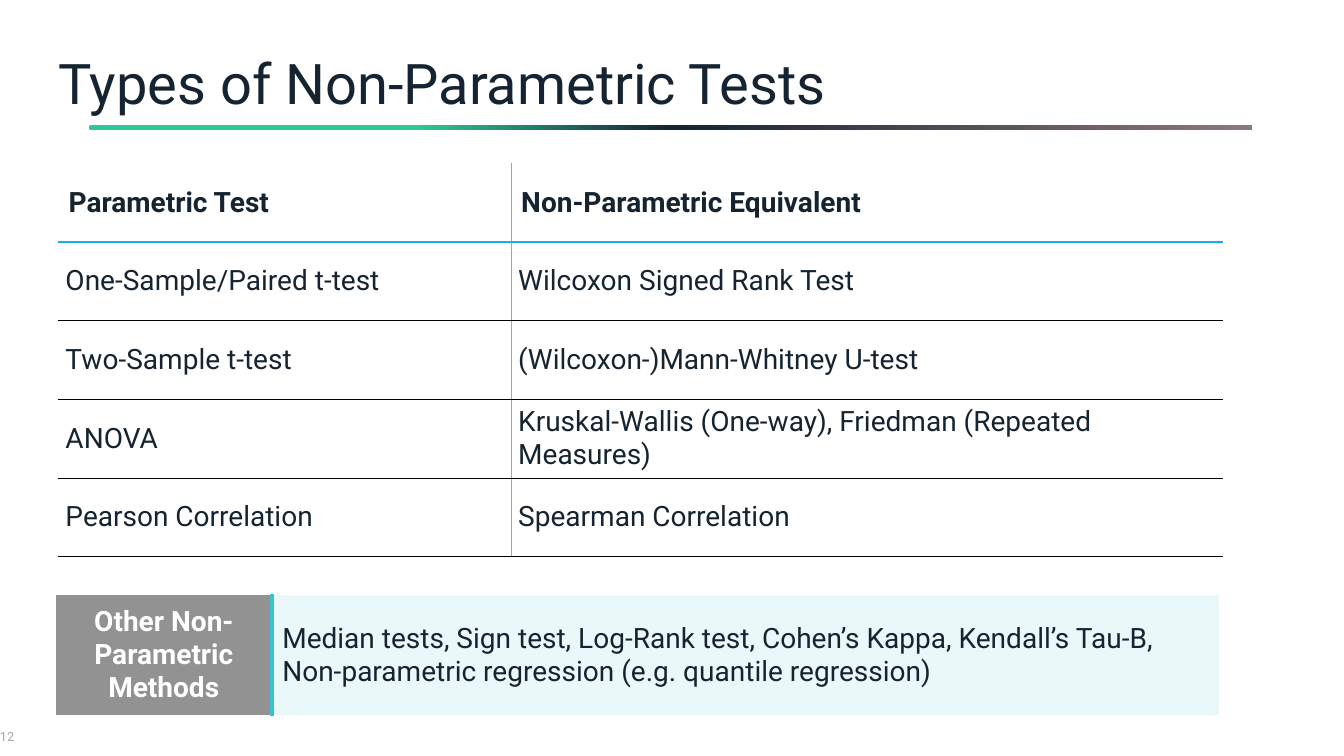
from dataclasses import dataclass

from lxml import etree
from pptx import Presentation
from pptx.dml.color import RGBColor
from pptx.enum.shapes import MSO_SHAPE
from pptx.enum.text import MSO_ANCHOR, PP_ALIGN
from pptx.oxml import parse_xml
from pptx.oxml.ns import nsdecls, qn
from pptx.util import Inches, Pt

ROUND_RECT = MSO_SHAPE.ROUNDED_RECTANGLE
MIDDLE, BOTTOM = MSO_ANCHOR.MIDDLE, MSO_ANCHOR.BOTTOM
LEFT, CENTER = PP_ALIGN.LEFT, PP_ALIGN.CENTER

FONT = "Roboto"
TITLE_ONLY = 5
COLORS = {
    "ink": "152430",
    "white": "FFFFFF",
    "black": "000000",
    "grey": "A5A5A5",
    "dark": "262626",
    "green": "2EC99B",
    "mauve": "907680",
    "blue": "1CADE4",
    "teal": "37C2D6",
    "pale": "D7F3F7",
}
TESTS = [
    ("Parametric Test", "Non-Parametric Equivalent"),
    ("One-Sample/Paired t-test", "Wilcoxon Signed Rank Test"),
    ("Two-Sample t-test", "(Wilcoxon-)Mann-Whitney U-test"),
    ("ANOVA", "Kruskal-Wallis (One-way), Friedman (Repeated Measures)"),
    ("Pearson Correlation", "Spearman Correlation"),
]
OTHER_LABEL = "Other Non-Parametric Methods"
OTHER_METHODS = (
    "Median tests, Sign test, Log-Rank test, Cohen’s Kappa, Kendall’s Tau-B, "
    "Non-parametric regression (e.g. quantile regression)"
)


@dataclass
class Border:
    color: str
    width: float


EDGE = Border("white", 1)
HEADER_RULE = Border("blue", 1.5)
ROW_RULE = Border("black", 0.25)
DIVIDER = Border("grey", 0.5)
ACCENT = Border("teal", 3)


@dataclass
class CellStyle:
    """Margins are horizontal and vertical inches; borders run left, right, top, bottom."""
    borders: tuple[Border, Border, Border, Border]
    fill: str = "white"
    opacity: int = 100
    color: str = "ink"
    bold: bool = False
    align: PP_ALIGN = LEFT
    margins: tuple[float, float] = (0.1, 0.05)


def add_run(p, text: str, size: float, color: str, bold: bool = False) -> None:
    r = p.add_run()
    r.text = text
    r.font.name = FONT
    r.font.size = Pt(size)
    r.font.bold = bold
    r.font.color.rgb = RGBColor.from_string(COLORS[color])


def clear_margins(tf) -> None:
    tf.margin_left = tf.margin_right = tf.margin_top = tf.margin_bottom = 0


def add_title(s, text: str) -> None:
    sp = s.shapes.title
    sp.left, sp.top = Inches(0.58), Inches(0.38)
    sp.width, sp.height = Inches(12.16), Inches(0.78)
    tf = sp.text_frame
    clear_margins(tf)
    tf.vertical_anchor = BOTTOM
    p = tf.paragraphs[0]
    p.alignment = LEFT
    p.line_spacing = 0.9
    add_run(p, text, 40, "ink")


def add_title_rule(s) -> None:
    sp = s.shapes.add_shape(
        ROUND_RECT, Inches(0.88), Inches(1.24), Inches(11.54), Inches(0.05))
    sp.adjustments[0] = 0.5
    sp.shadow.inherit = False
    sp.line.fill.background()
    sp.fill.gradient()
    sp.fill.gradient_angle = 0
    stops = sp.fill._fill._gradFill.find(qn("a:gsLst"))
    for stop in list(stops):
        stops.remove(stop)
    for percent, color in ((0, "green"), (28, "green"), (50, "ink"), (100, "mauve")):
        stops.append(parse_xml(
            f'<a:gs {nsdecls("a")} pos="{percent * 1000}">'
            f'<a:srgbClr val="{COLORS[color]}"/></a:gs>'))


def add_page_number(s, number: str) -> None:
    sp = s.shapes.add_textbox(0, Inches(7.1), Inches(1.1), Inches(0.28))
    tf = sp.text_frame
    clear_margins(tf)
    tf.word_wrap = True
    tf.vertical_anchor = BOTTOM
    add_run(tf.paragraphs[0], number, 9, "grey")


def set_borders(cell, borders: tuple[Border, ...]) -> None:
    tc_pr = cell._tc.get_or_add_tcPr()
    for i, (side, border) in enumerate(zip("LRTB", borders)):
        tc_pr.insert(i, parse_xml(
            f'<a:ln{side} {nsdecls("a")} w="{Pt(border.width)}"><a:solidFill>'
            f'<a:srgbClr val="{COLORS[border.color]}"/></a:solidFill></a:ln{side}>'))


def fill_cell(cell, text: str, style: CellStyle) -> None:
    cell.fill.solid()
    cell.fill.fore_color.rgb = RGBColor.from_string(COLORS[style.fill])
    if style.opacity < 100:
        rgb = cell._tc.tcPr.find(f'{qn("a:solidFill")}/{qn("a:srgbClr")}')
        etree.SubElement(rgb, qn("a:alpha"), val=str(style.opacity * 1000))
    set_borders(cell, style.borders)
    horizontal, vertical = style.margins
    cell.margin_left = cell.margin_right = Inches(horizontal)
    cell.margin_top = cell.margin_bottom = Inches(vertical)
    cell.vertical_anchor = MIDDLE
    p = cell.text_frame.paragraphs[0]
    p.alignment = style.align
    add_run(p, text, 20, style.color, style.bold)


def add_plain_table(s, left: float, top: float, widths: list[float],
                    row_height: float, rows: int):
    """Add a table without the banding and header look of its style."""
    table = s.shapes.add_table(
        rows, len(widths), Inches(left), Inches(top),
        Inches(sum(widths)), Inches(row_height * rows)).table
    table.first_row = table.horz_banding = False
    for column, width in zip(table.columns, widths):
        column.width = Inches(width)
    return table


def add_tests_table(s) -> None:
    table = add_plain_table(s, 0.58, 1.62, [4.49, 7.05], 0.78, len(TESTS))
    rules = [EDGE, HEADER_RULE] + [ROW_RULE] * (len(TESTS) - 1)
    uprights = [EDGE, DIVIDER, EDGE]
    for i, row in enumerate(TESTS):
        header = i == 0
        for j, text in enumerate(row):
            fill_cell(table.cell(i, j), text, CellStyle(
                borders=(uprights[j], uprights[j + 1], rules[i], rules[i + 1]),
                bold=header,
                margins=(0.1, 0.05) if header else (0.07, 0)))


def add_other_methods(s) -> None:
    table = add_plain_table(s, 0.55, 5.9, [2.15, 9.4], 1.17, 1)
    label = CellStyle((EDGE, ACCENT, EDGE, EDGE), "dark", 50, "white", True,
                      CENTER, (0.1, 0.1))
    methods = CellStyle((ACCENT, EDGE, EDGE, EDGE), "pale", 50, margins=(0.1, 0.1))
    fill_cell(table.cell(0, 0), OTHER_LABEL, label)
    fill_cell(table.cell(0, 1), OTHER_METHODS, methods)


def main() -> None:
    prs = Presentation()
    prs.slide_width, prs.slide_height = Inches(13.33), Inches(7.5)
    s = prs.slides.add_slide(prs.slide_layouts[TITLE_ONLY])
    add_title_rule(s)
    add_title(s, "Types of Non-Parametric Tests")
    add_page_number(s, "12")
    add_tests_table(s)
    add_other_methods(s)
    prs.save("out.pptx")


if __name__ == "__main__":
    main()
